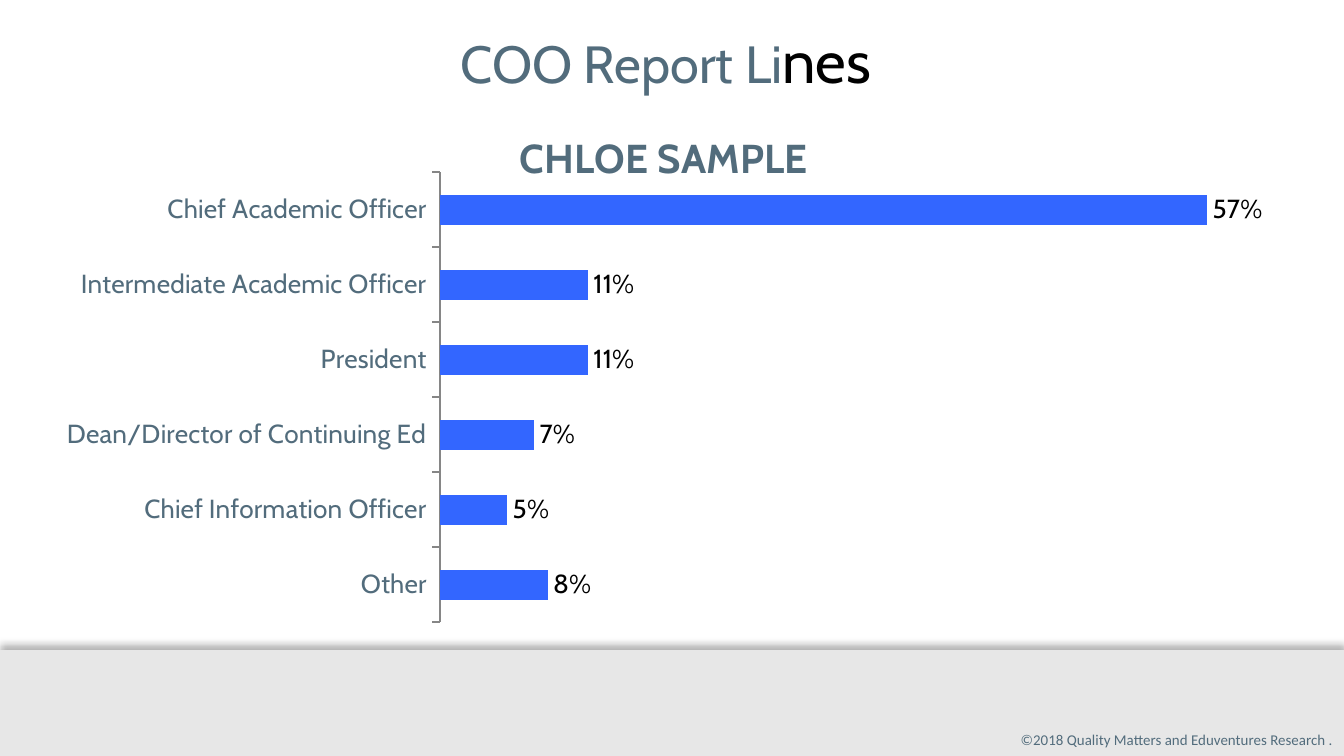
from dataclasses import dataclass

from lxml.etree import SubElement
from pptx import Presentation
from pptx.chart.data import CategoryChartData
from pptx.dml.color import RGBColor
from pptx.enum.chart import XL_CHART_TYPE as ChartType
from pptx.enum.chart import XL_LABEL_POSITION as LabelPosition
from pptx.enum.chart import XL_TICK_MARK as TickMark
from pptx.enum.shapes import MSO_SHAPE as Shape
from pptx.enum.text import MSO_AUTO_SIZE as AutoSize
from pptx.enum.text import PP_ALIGN as Align
from pptx.oxml import parse_xml
from pptx.oxml.ns import nsdecls, qn
from pptx.util import Inches, Pt

REPORT_LINES = {
    "Chief Academic Officer": 0.57,
    "Intermediate Academic Officer": 0.11,
    "President": 0.11,
    "Dean/Director of Continuing Ed": 0.07,
    "Chief Information Officer": 0.05,
    "Other": 0.08,
}


@dataclass(frozen=True)
class Theme:
    slate: str = "526C7C"
    black: str = "000000"
    band: str = "E7E7E7"
    bar: str = "3366FF"
    axis: str = "868686"
    heading_font: str = "Cabin"
    footer_font: str = "Calibri"
    title: float = 28
    title_end: float = 32
    chart_title: float = 21.6
    label: float = 14
    footer: float = 8


class SlideBuilder:
    """Draws styled elements on one slide, placed by percentages of its size."""

    def __init__(self, deck, theme):
        self.deck = deck
        self.theme = theme
        self.page = deck.slides.add_slide(deck.slide_layouts[6])

    def place(self, left, top, width, height):
        across, down = self.deck.slide_width / 100, self.deck.slide_height / 100
        return (round(left * across), round(top * down),
                round(width * across), round(height * down))

    def style(self, font, size, color, name=None, bold=False):
        font.name = name or self.theme.heading_font
        font.size = Pt(size)
        font.bold = bold
        font.color.rgb = RGBColor.from_string(color)

    def band(self, *area):
        band = self.page.shapes.add_shape(Shape.RECTANGLE, *self.place(*area))
        band.fill.solid()
        band.fill.fore_color.rgb = RGBColor.from_string(self.theme.band)
        band.line.fill.background()
        band.shadow.inherit = False
        effects = band.element.spPr.find(qn("a:effectLst"))
        shadow = SubElement(effects, qn("a:outerShdw"), blurRad=str(Pt(4)), dist=str(Pt(3)),
                            dir=str(270 * 60000), rotWithShape="0")
        color = SubElement(shadow, qn("a:srgbClr"), val=self.theme.black)
        SubElement(color, qn("a:alpha"), val="30000")

    def text(self, area, spans, align, name=None, right_inset=0.1):
        frame = self.page.shapes.add_textbox(*self.place(*area)).text_frame
        frame.word_wrap = True
        frame.auto_size = AutoSize.SHAPE_TO_FIT_TEXT
        frame.margin_right = Inches(right_inset)
        para = frame.paragraphs[0]
        para.alignment = align
        for words, size, color in spans:
            span = para.add_run()
            span.text = words
            self.style(span.font, size, color, name)

    def bar_chart(self, area, title, values, top_value, title_corner, plot_area):
        theme = self.theme
        data = CategoryChartData(number_format="0%")
        data.categories = list(values)[::-1]
        data.add_series(title, list(values.values())[::-1])
        chart = self.page.shapes.add_chart(
            ChartType.BAR_CLUSTERED, *self.place(*area), data).chart
        self.style(chart.font, theme.label, theme.black)
        chart.has_legend = False
        chart.has_title = True
        chart.chart_title.text_frame.text = title
        heading = chart.chart_title.text_frame.paragraphs[0].runs[0]
        self.style(heading.font, theme.chart_title, theme.slate, bold=True)

        categories = chart.category_axis
        categories.major_tick_mark = TickMark.OUTSIDE
        categories.format.line.color.rgb = RGBColor.from_string(theme.axis)
        categories.format.line.width = Pt(0.75)
        self.style(categories.tick_labels.font, theme.label, theme.slate)
        scale = chart.value_axis
        scale.minimum_scale, scale.maximum_scale = 0, top_value
        scale.has_major_gridlines = False
        scale.visible = False

        plot = chart.plots[0]
        plot.gap_width = 150
        plot.vary_by_categories = False
        fill = plot.series[0].format.fill
        fill.solid()
        fill.fore_color.rgb = RGBColor.from_string(theme.bar)
        plot.has_data_labels = True
        labels = plot.data_labels
        labels.show_value = True
        labels.number_format = "0%"
        labels.number_format_is_linked = False
        labels.position = LabelPosition.OUTSIDE_END
        self.style(labels.font, theme.label, theme.black)
        self.fix_layout(chart, "c:title", title_corner, after=1)
        self.fix_layout(chart, "c:plotArea", plot_area, target='<c:layoutTarget val="inner"/>')

    def fix_layout(self, chart, tag, percents, after=0, target=""):
        modes = '<c:xMode val="edge"/><c:yMode val="edge"/>'
        sides = "".join(f'<c:{side} val="{percent / 100}"/>'
                        for side, percent in zip("xywh", percents))
        part = chart.element.find(".//" + qn(tag))
        for layout in part.findall(qn("c:layout")):
            part.remove(layout)
        part.insert(after, parse_xml(
            f'<c:layout {nsdecls("c")}><c:manualLayout>{target}'
            f"{modes}{sides}</c:manualLayout></c:layout>"))


def main():
    deck = Presentation()
    deck.slide_width = Inches(10)
    deck.slide_height = deck.slide_width * 9 // 16
    theme = Theme()
    slide = SlideBuilder(deck, theme)
    slide.band(0, 86, 100, 14)
    slide.text((67.5, 95.8, 31.7, 4.3),
               [("©2018 Quality Matters and Eduventures Research .", theme.footer, theme.slate)],
               Align.RIGHT, theme.footer_font, right_inset=0)
    slide.text((1.7, 2.3, 95.7, 11.4),
               [("COO Report Li", theme.title, theme.slate),
                ("nes", theme.title_end, theme.black)], Align.CENTER)
    slide.bar_chart((2.6, 15.1, 94.8, 70.4), "CHLOE SAMPLE", REPORT_LINES, top_value=0.6,
                    title_corner=(37.5, 1.5), plot_area=(31.8, 10.9, 63.4, 84.6))
    deck.save("out.pptx")


if __name__ == "__main__":
    main()
